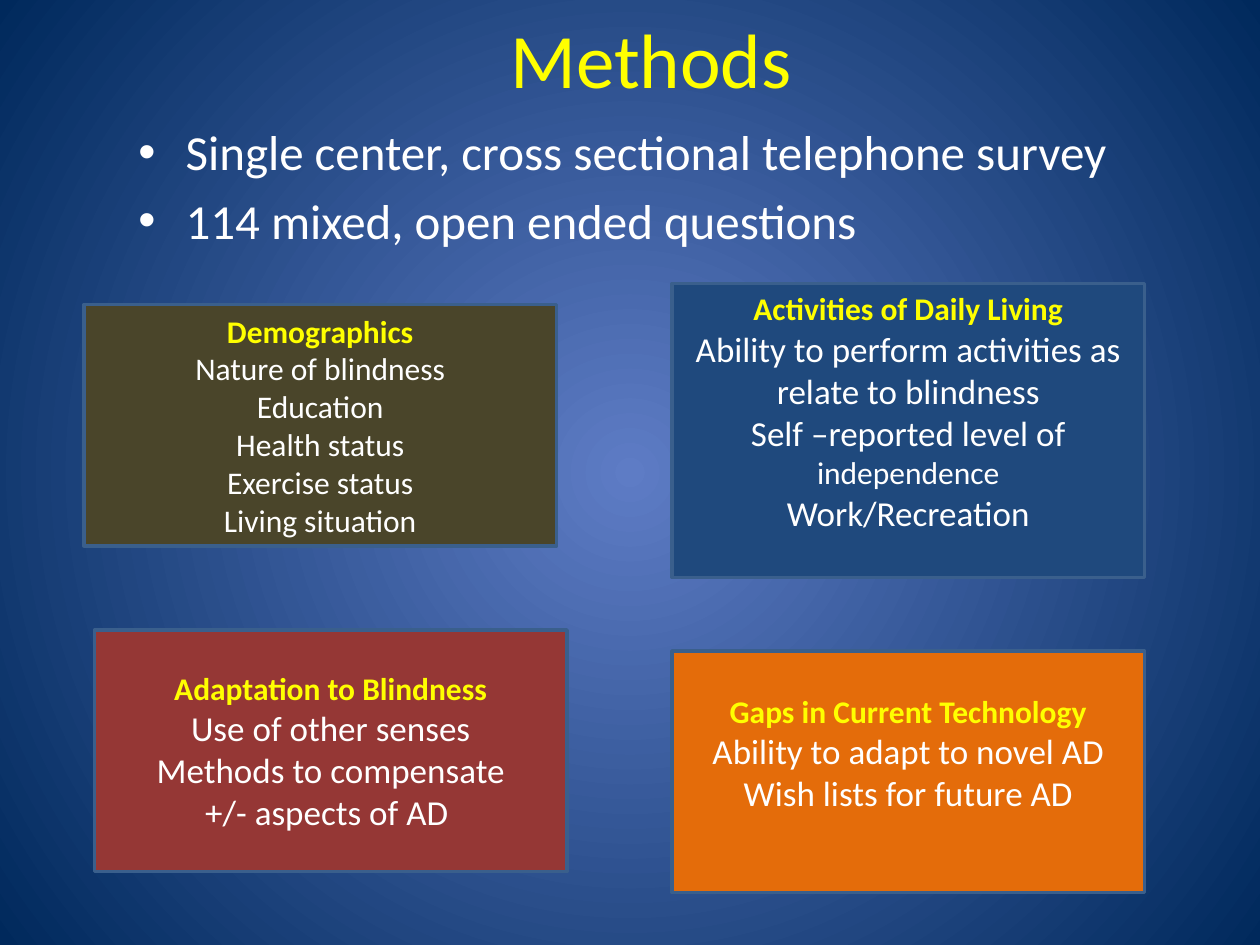
from lxml.etree import SubElement as Sub
from pptx import Presentation
from pptx.dml.color import RGBColor as RGB
from pptx.enum.shapes import MSO_SHAPE as Shape
from pptx.enum.text import MSO_ANCHOR as Anchor, PP_ALIGN as Align
from pptx.oxml.ns import qn
from pptx.util import Pt

PX = 9525  # 96 px to the inch
COLORS = {
    "glow": "5E7CC5", "edge": "00295C", "head": "FFFF00", "text": "FFFFFF",
    "line": "3A5F8C", "olive": "4A452A", "red": "953735",
    "orange": "E46C0A", "navy": "1F497D",
}


def color(name):
    return RGB.from_string(COLORS[name])


def style(item, size, name, bold=False):
    """Set the font of a paragraph or a run."""
    font = item.font
    font.name, font.size, font.bold = "Calibri", Pt(size), bold
    font.color.rgb = color(name)


deck = Presentation()
deck.slide_width, deck.slide_height = 960 * PX, 720 * PX
slide = deck.slides.add_slide(deck.slide_layouts[6])
shapes = slide.shapes

# Round gradient from the centre of the slide
fill = slide.background.fill
fill.gradient()
for stop, name in zip(fill.gradient_stops, ("glow", "edge")):
    stop.color.rgb = color(name)
grad = slide.element.find(".//" + qn("a:gradFill"))
grad.remove(grad.find(qn("a:lin")))
round_ = Sub(grad, qn("a:path"), path="circle")
Sub(round_, qn("a:fillToRect"), l="50000", t="50000", r="50000", b="50000")

# Title
frame = shapes.add_textbox(88 * PX, 0, 816 * PX, 88 * PX).text_frame
frame.word_wrap = True
frame.vertical_anchor = Anchor.MIDDLE
para = frame.paragraphs[0]
para.text, para.alignment = "Methods", Align.CENTER
style(para, 44, "head")

# Bullets
points = ["Single center, cross sectional telephone survey",
          "114 mixed, open ended questions"]
frame = shapes.add_textbox(96 * PX, 88 * PX, 816 * PX, 120 * PX).text_frame
frame.word_wrap = True
frame.text = "\n".join(points)
for para in frame.paragraphs:
    style(para, 28, "text")
    para.space_before = Pt(5.6)
    props = para._p.get_or_add_pPr()
    props.set("marL", str(36 * PX))
    props.set("indent", str(-36 * PX))
    Sub(props, qn("a:buFont"), typeface="Arial")
    # The bullet must come before the default run properties
    Sub(props, qn("a:buChar"), char="•")
    props.append(props.find(qn("a:defRPr")))

# Topic boxes: left, top, height, bottom inset, fill, text size, lines
boxes = [
    (64, 232, 184, 5, "olive", 18,
     ["Demographics", "Nature of blindness", "Education", "Health status",
      "Exercise status", "Living situation"]),
    (72, 480, 184, 5, "red", 20,
     ["Adaptation to Blindness", "Use of other senses",
      "Methods to compensate", "+/- aspects of AD "]),
    (512, 496, 184, 34, "orange", 20,
     ["Gaps in Current Technology", "Ability to adapt to novel AD",
      "Wish lists for future AD"]),
    (512, 216, 224, 34, "navy", 20,
     ["Activities of Daily Living",
      "Ability to perform activities as relate to blindness",
      "Self –reported level of ", "Work/Recreation"]),
]
for left, top, high, inset, name, size, lines in boxes:
    box = shapes.add_shape(Shape.RECTANGLE, left * PX, top * PX,
                           360 * PX, high * PX)
    box.shadow.inherit = False
    box.fill.solid()
    box.fill.fore_color.rgb = color(name)
    box.line.color.rgb = color("line")
    box.line.width = Pt(2)
    frame = box.text_frame
    frame.word_wrap = True
    frame.vertical_anchor = Anchor.MIDDLE
    frame.margin_bottom = inset * PX
    frame.text = "\n".join(lines)
    for para in frame.paragraphs:
        para.alignment = Align.CENTER
        style(para, size, "text")
    style(frame.paragraphs[0], 18, "head", True)

# The last box ends its third line in a smaller size
para = frame.paragraphs[2]
run = para.add_run()
run.text = "independence"
style(run, 18, "text")

deck.save("out.pptx")
